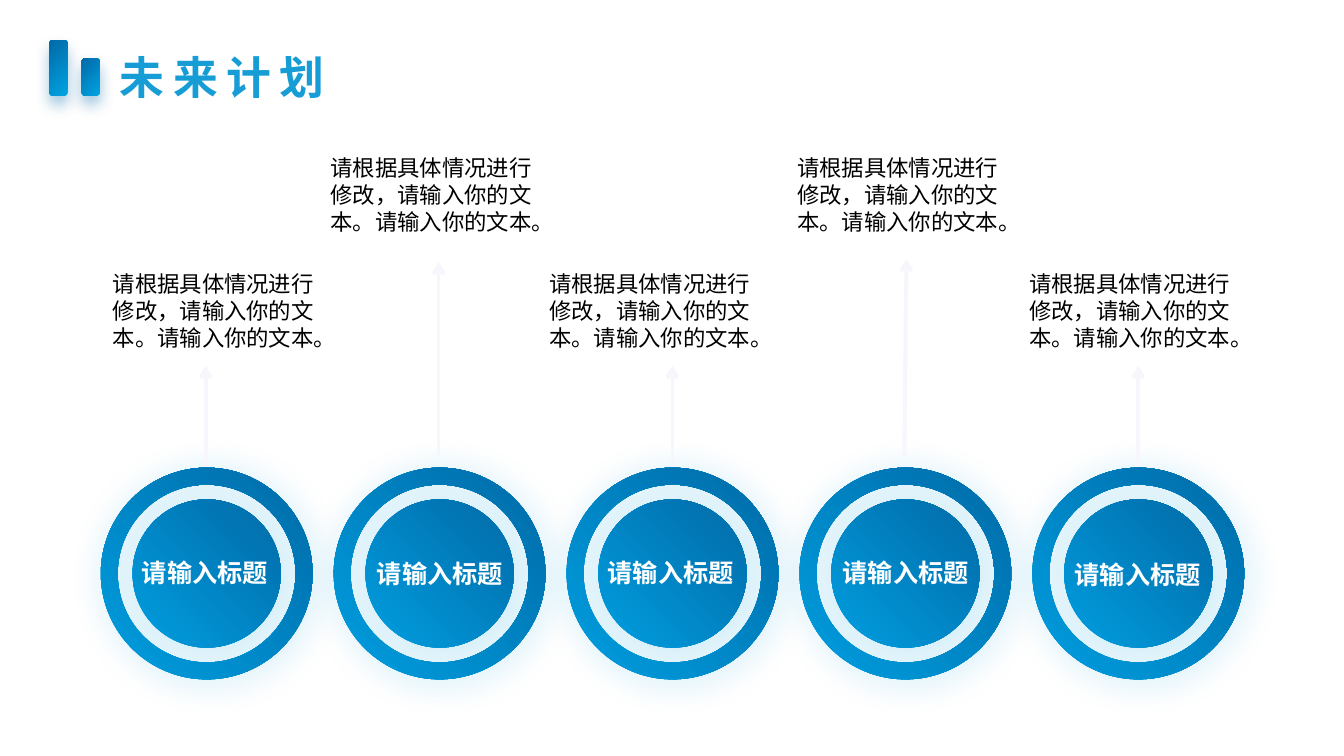
"""Build a slide of five future-plan milestones with captions above them."""
from dataclasses import dataclass

from lxml.etree import SubElement
from pptx import Presentation
from pptx.dml.color import RGBColor
from pptx.enum.shapes import MSO_CONNECTOR, MSO_SHAPE
from pptx.enum.text import MSO_ANCHOR, MSO_AUTO_SIZE, PP_ALIGN
from pptx.oxml.ns import qn
from pptx.util import Inches, Pt


@dataclass(frozen=True)
class Theme:
    font: str = "Noto Sans CJK SC"
    title: str = "169DD5"
    body: str = "000000"
    label: str = "FFFFFF"
    circle: str = "009EDF"
    accent: str = "00A3E2"
    dark: str = "026AA8"
    arrow: str = "F6F6FC"
    title_size: int = 32
    label_size: int = 18
    body_size: int = 16


theme = Theme()


def write_text(shape, text, size, color, bold=False, wrap=False, spacing=0):
    frame = shape.text_frame
    frame.word_wrap = wrap
    frame.auto_size = MSO_AUTO_SIZE.SHAPE_TO_FIT_TEXT
    frame.vertical_anchor = MSO_ANCHOR.TOP
    paragraph = frame.paragraphs[0]
    paragraph.alignment = PP_ALIGN.LEFT
    run = paragraph.add_run()
    run.text = text
    run.font.size = Pt(size)
    run.font.bold = bold
    run.font.color.rgb = RGBColor.from_string(color)
    run.font.name = theme.font
    properties = run.font._element
    SubElement(properties, qn("a:ea")).set("typeface", theme.font)
    if spacing:
        properties.set("spc", str(spacing * 100))


def add_gradient_shape(kind, box, start, angle, shadow):
    shape = slide.shapes.add_shape(kind, *map(Inches, box))
    shape.line.fill.background()
    shape.fill.gradient()
    shape.fill.gradient_angle = angle
    for stop, color in zip(shape.fill.gradient_stops, (start, theme.dark)):
        stop.color.rgb = RGBColor.from_string(color)
    shape.shadow.inherit = False
    color, opacity, blur, distance, direction = shadow
    effects = shape._element.spPr.find(qn("a:effectLst"))
    outer = SubElement(effects, qn("a:outerShdw"), blurRad=str(Pt(blur)), dist=str(Pt(distance)),
                       dir=str(direction * 60000), algn="ctr", rotWithShape="0")
    tint = SubElement(outer, qn("a:srgbClr"), val=color)
    SubElement(tint, qn("a:alpha"), val=str(opacity * 1000))
    return shape


presentation = Presentation()
presentation.slide_width = Inches(13.33)
presentation.slide_height = Inches(7.5)
slide = presentation.slides.add_slide(presentation.slide_layouts[5])

title = slide.shapes.title
title.left, title.top, title.width, title.height = map(Inches, (1.09, 0.44, 2.32, 0.64))
write_text(title, "未来计划", theme.title_size, theme.title, bold=True, spacing=6)

bar_bottom = 0.95
for left, height in ((0.49, 0.55), (0.81, 0.37)):
    bar = add_gradient_shape(MSO_SHAPE.ROUNDED_RECTANGLE, (left, bar_bottom - height, 0.18, height),
                             theme.accent, 315, (theme.dark, 40, 11, 6, 90))
    bar.rotation = 180

ring_size, disc_size, ring_top, pitch = 2.1, 1.47, 4.64, 2.31
inset = (ring_size - disc_size) / 2
glow = (theme.accent, 21, 25, 3, 45)
caption = "请根据具体情况进行修改，请输入你的文本。请输入你的文本。"
milestones = (
    ((1.31, 5.48), (1.02, 2.63), (2.04, 4.63), (2.04, 3.63)),
    ((3.64, 5.49), (3.18, 1.48), (4.35, 4.52), (4.35, 2.6)),
    ((5.93, 5.48), (5.35, 2.63), (6.67, 4.63), (6.67, 3.63)),
    ((8.26, 5.48), (7.81, 1.48), (8.97, 4.52), (8.99, 2.57)),
    ((10.56, 5.5), (10.11, 2.63), (11.29, 4.63), (11.29, 3.63)),
)

for index in range(len(milestones)):
    ring_left = 1 + index * pitch
    ring = add_gradient_shape(MSO_SHAPE.DONUT, (ring_left, ring_top, ring_size, ring_size),
                              theme.circle, 45, glow)
    ring.adjustments[0] = 0.08
    add_gradient_shape(MSO_SHAPE.OVAL, (ring_left + inset, ring_top + inset, disc_size, disc_size),
                       theme.circle, 45, glow)

for label_place, caption_place, arrow_start, arrow_end in milestones:
    arrow = slide.shapes.add_connector(MSO_CONNECTOR.STRAIGHT, *map(Inches, arrow_start + arrow_end))
    arrow.line.width = Pt(2.75)
    arrow.line.color.rgb = RGBColor.from_string(theme.arrow)
    SubElement(arrow.line._get_or_add_ln(), qn("a:tailEnd"), type="arrow")
    SubElement(arrow._element.spPr, qn("a:effectLst"))

    label_box = slide.shapes.add_textbox(*map(Inches, label_place + (1.5, 0.4)))
    write_text(label_box, "请输入标题", theme.label_size, theme.label, bold=True)

    caption_box = slide.shapes.add_textbox(*map(Inches, caption_place + (2.34, 0.91)))
    write_text(caption_box, caption, theme.body_size, theme.body, wrap=True)

presentation.save("out.pptx")
